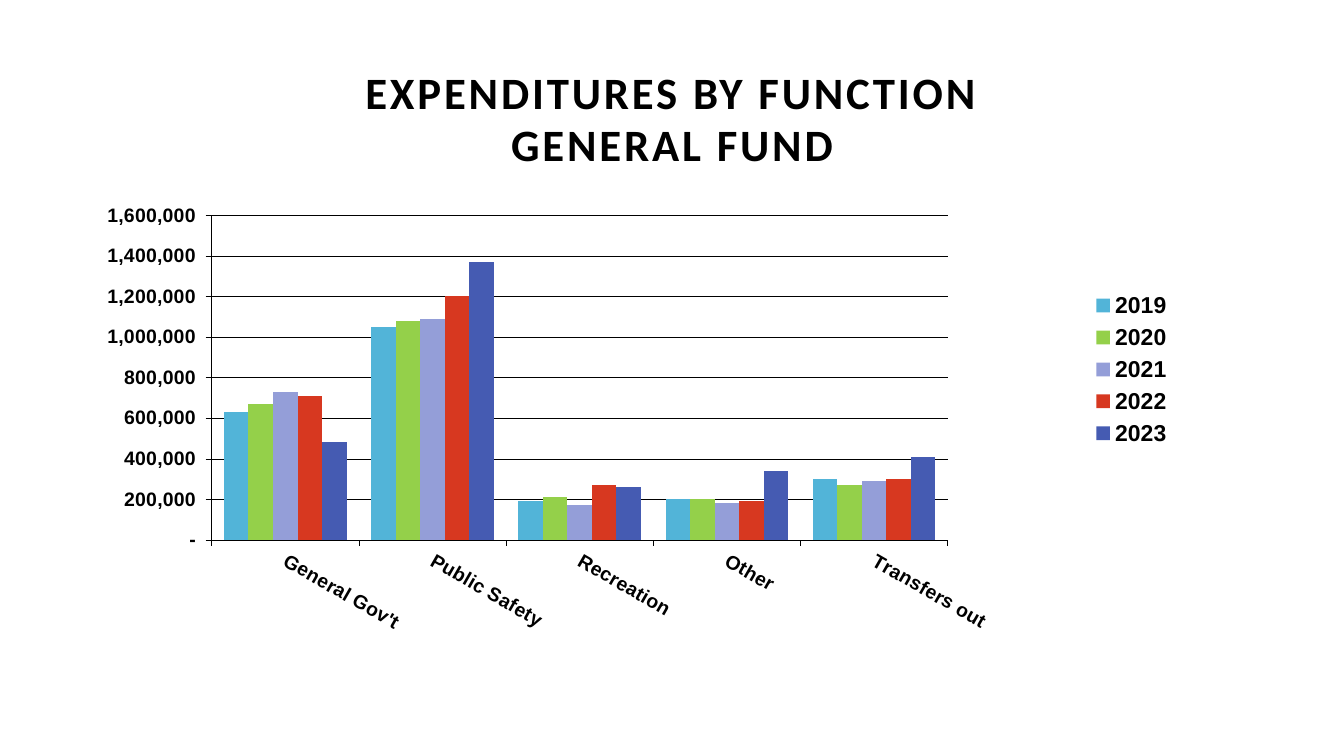
from dataclasses import dataclass

from lxml.etree import SubElement
from pptx import Presentation
from pptx.chart.chart import Chart
from pptx.chart.data import CategoryChartData
from pptx.dml.color import RGBColor
from pptx.enum.chart import XL_CHART_TYPE as ChartType
from pptx.enum.chart import XL_LEGEND_POSITION as LegendPosition
from pptx.enum.chart import XL_TICK_LABEL_POSITION as LabelPosition
from pptx.enum.chart import XL_TICK_MARK as TickMark
from pptx.enum.text import MSO_ANCHOR as Anchor
from pptx.enum.text import PP_ALIGN as Align
from pptx.oxml.ns import qn
from pptx.slide import Slide
from pptx.text.text import Font
from pptx.util import Cm, Pt


@dataclass(frozen=True)
class Theme:
    ink: str = "000000"
    title_font: str = "Calibri"
    chart_font: str = "Arial"
    title_size: float = 32
    chart_size: float = 17.9
    axis_size: float = 13.9
    legend_size: float = 16.4
    hairline: float = 0.25


@dataclass(frozen=True)
class Frame:
    left: float
    top: float
    width: float
    height: float


@dataclass(frozen=True)
class FiscalYear:
    name: str
    color: str
    amounts: tuple[int, ...]


THEME = Theme()
TITLE = "EXPENDITURES BY FUNCTION\vGENERAL FUND"
TITLE_FRAME = Frame(0.64, 1.57, 32.6, 2.92)
CHART_FRAME = Frame(0.64, 4.78, 32.6, 12.24)
PLOT_SHARE = Frame(0.144, 0.053, 0.569, 0.668)
LEGEND_SHARE = Frame(0.81, 0.2, 0.09, 0.34)
AMOUNT_FORMAT = '_(* #,##0_);_(* \\(#,##0\\);_(* "-"_);_(@_)'
LABEL_ANGLE = 30
FUNCTIONS = ("General Gov't", "Public Safety", "Recreation", "Other", "Transfers out")
YEARS = (
    FiscalYear("2019", "52B4D8", (630000, 1050000, 190000, 200000, 300000)),
    FiscalYear("2020", "94D04A", (670000, 1080000, 210000, 200000, 270000)),
    FiscalYear("2021", "949ED8", (730000, 1090000, 170000, 180000, 290000)),
    FiscalYear("2022", "D73820", (710000, 1200000, 270000, 190000, 300000)),
    FiscalYear("2023", "455BB2", (480000, 1370000, 260000, 340000, 410000)),
)


def set_font(font: Font, name: str, size: float) -> None:
    font.name = name
    font.size = Pt(size)
    font.bold = True
    font.color.rgb = RGBColor.from_string(THEME.ink)


def set_line(line) -> None:
    line.color.rgb = RGBColor.from_string(THEME.ink)
    line.width = Pt(THEME.hairline)


def place(parent, index: int, share: Frame, inner: bool = False) -> None:
    for old in parent.findall(qn("c:layout")):
        parent.remove(old)
    layout = SubElement(parent, qn("c:layout"))
    parent.insert(index, layout)
    manual = SubElement(layout, qn("c:manualLayout"))
    settings = [("layoutTarget", "inner")] if inner else []
    settings += [("xMode", "edge"), ("yMode", "edge")]
    settings += [("x", share.left), ("y", share.top), ("w", share.width), ("h", share.height)]
    for tag, value in settings:
        SubElement(manual, qn(f"c:{tag}")).set("val", str(value))


def add_title(page: Slide, frame: Frame) -> None:
    box = page.shapes.add_textbox(Cm(frame.left), Cm(frame.top), Cm(frame.width), Cm(frame.height))
    box.text_frame.word_wrap = True
    box.text_frame.vertical_anchor = Anchor.MIDDLE
    para = box.text_frame.paragraphs[0]
    para.text = TITLE
    para.alignment = Align.CENTER
    para.line_spacing = 0.97
    set_font(para.font, THEME.title_font, THEME.title_size)
    for span in para.runs:
        span.font.bold = True
        span.font._element.set("spc", "200")


def style_axes(chart: Chart) -> None:
    for axis in (chart.category_axis, chart.value_axis):
        axis.major_tick_mark = TickMark.OUTSIDE
        axis.minor_tick_mark = TickMark.NONE
        axis.tick_labels.number_format = AMOUNT_FORMAT
        axis.tick_labels.number_format_is_linked = False
        set_font(axis.tick_labels.font, THEME.chart_font, THEME.axis_size)
        set_line(axis.format.line)
    chart.category_axis.tick_label_position = LabelPosition.LOW
    label_body = chart.category_axis._element.find(qn("c:txPr")).find(qn("a:bodyPr"))
    label_body.set("rot", str(LABEL_ANGLE * 60000))
    label_body.set("vert", "horz")
    chart.value_axis.minimum_scale = 0
    chart.value_axis.maximum_scale = 1600000
    chart.value_axis.major_unit = 200000
    chart.value_axis.has_major_gridlines = True
    set_line(chart.value_axis.major_gridlines.format.line)


def add_expenditures(page: Slide, frame: Frame) -> None:
    data = CategoryChartData(number_format=AMOUNT_FORMAT)
    data.categories = FUNCTIONS
    for year in YEARS:
        data.add_series(year.name, year.amounts)
    chart = page.shapes.add_chart(
        ChartType.COLUMN_CLUSTERED,
        Cm(frame.left), Cm(frame.top), Cm(frame.width), Cm(frame.height), data,
    ).chart
    chart.has_title = False
    set_font(chart.font, THEME.chart_font, THEME.chart_size)
    style_axes(chart)

    plot = chart.plots[0]
    plot.gap_width = 100
    plot.overlap = 0
    plot.vary_by_categories = False
    for series, year in zip(plot.series, YEARS):
        series.format.fill.solid()
        series.format.fill.fore_color.rgb = RGBColor.from_string(year.color)

    chart.has_legend = True
    chart.legend.position = LegendPosition.RIGHT
    chart.legend.include_in_layout = False
    set_font(chart.legend.font, THEME.chart_font, THEME.legend_size)
    place(chart._chartSpace.chart.plotArea, 0, PLOT_SHARE, inner=True)
    place(chart.legend._element, 1, LEGEND_SHARE)


def main() -> None:
    deck = Presentation()
    deck.slide_width, deck.slide_height = Cm(33.87), Cm(19.05)
    page = deck.slides.add_slide(deck.slide_layouts[6])
    add_title(page, TITLE_FRAME)
    add_expenditures(page, CHART_FRAME)
    deck.save("out.pptx")


if __name__ == "__main__":
    main()
